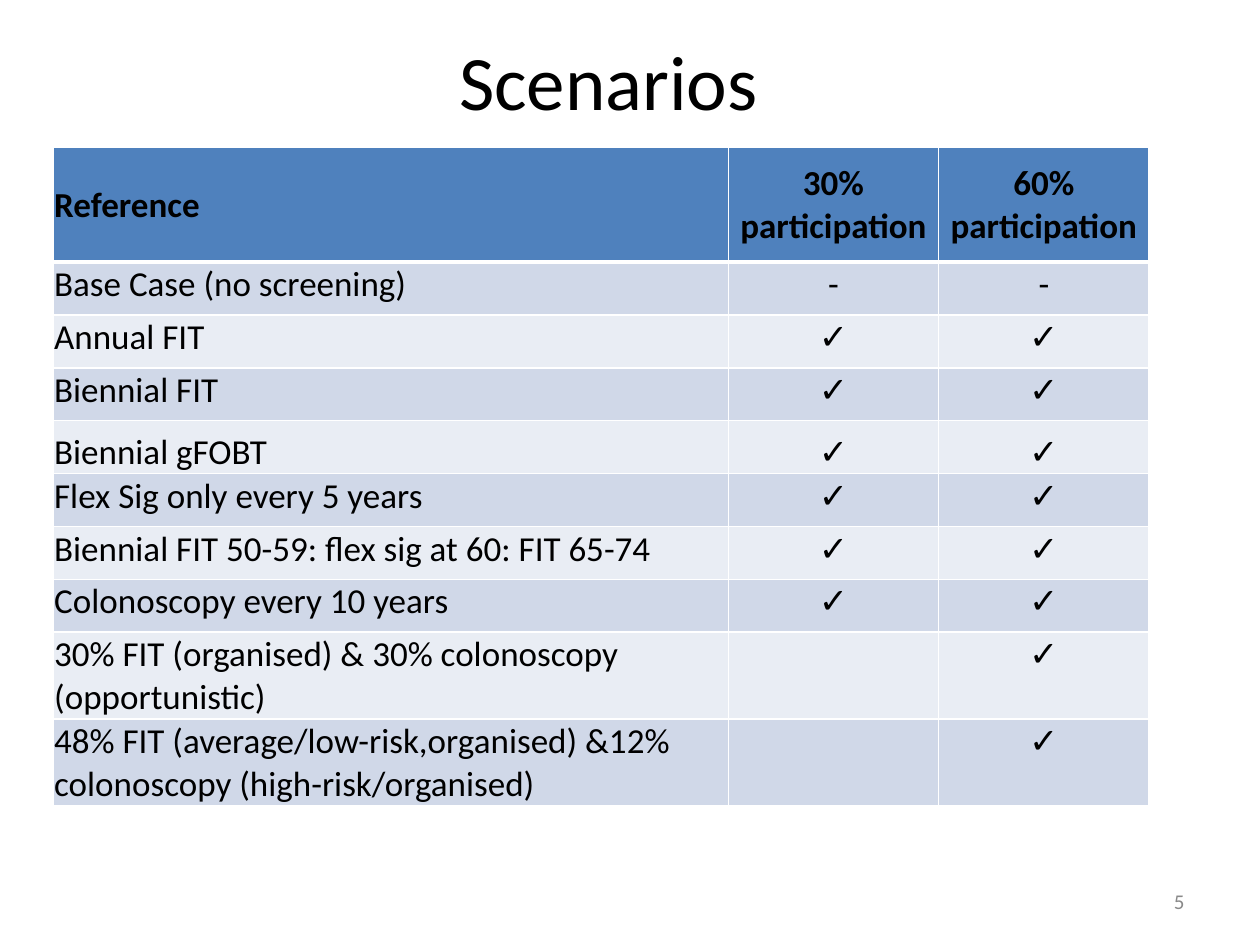
from lxml.etree import SubElement
from pptx import Presentation
from pptx.dml.color import RGBColor
from pptx.enum.text import MSO_ANCHOR, PP_ALIGN
from pptx.oxml.ns import qn
from pptx.util import Inches, Pt

COLORS = {"text": "000000", "header": "4F81BD", "odd": "D0D8E8",
          "even": "E9EDF4", "border": "FFFFFF", "number": "898989"}
TICK = "✓"

deck = Presentation()
deck.slide_width, deck.slide_height = Inches(10), Inches(7.5)
slide = deck.slides.add_slide(deck.slide_layouts[6])


def write(frame, text, align, color, **font_format):
    paragraph = frame.paragraphs[0]
    paragraph.alignment = align
    run = paragraph.add_run()
    run.text = text
    run.font.color.rgb = RGBColor.from_string(COLORS[color])
    for name, value in {"name": "Calibri", **font_format}.items():
        setattr(run.font, name, value)


def add_borders(cell, widths):
    properties = cell._tc.get_or_add_tcPr()
    for side, width in widths.items():
        line = SubElement(properties, qn(f"a:ln{side}"), w=str(Pt(width)))
        fill = SubElement(line, qn("a:solidFill"))
        SubElement(fill, qn("a:srgbClr"), val=COLORS["border"])


# Title and slide number
for text, box, align, color, size in [
    ("Scenarios", (0.33, 0.17, 9, 0.92), PP_ALIGN.CENTER, "text", 44),
    ("5", (7.17, 6.95, 2.33, 0.4), PP_ALIGN.RIGHT, "number", 12),
]:
    frame = slide.shapes.add_textbox(*map(Inches, box)).text_frame
    frame.word_wrap = True
    frame.vertical_anchor = MSO_ANCHOR.MIDDLE
    write(frame, text, align, color, size=Pt(size))

# Scenario table
scenarios = [
    ("Reference", "30% participation", "60% participation"),
    ("Base Case (no screening)", "-", "-"),
    ("Annual FIT", TICK, TICK),
    ("Biennial FIT", TICK, TICK),
    ("Biennial gFOBT", TICK, TICK),
    ("Flex Sig only every 5 years", TICK, TICK),
    ("Biennial FIT 50-59: flex sig at 60: FIT 65-74", TICK, TICK),
    ("Colonoscopy every 10 years", TICK, TICK),
    ("30% FIT (organised) & 30% colonoscopy (opportunistic)", "", TICK),
    ("48% FIT (average/low-risk,organised) &12% colonoscopy (high-risk/organised)", "", TICK),
]
column_widths = [5.36, 1.67, 1.67]
row_heights = [0.91] + [0.42] * 7 + [0.69] * 2
anchors = {0: MSO_ANCHOR.MIDDLE, 4: MSO_ANCHOR.BOTTOM}

table = slide.shapes.add_table(
    len(scenarios), len(column_widths), Inches(0.42), Inches(1.17),
    Inches(sum(column_widths)), Inches(sum(row_heights))).table
for column, width in zip(table.columns, column_widths):
    column.width = Inches(width)

for r, (scenario, height) in enumerate(zip(scenarios, row_heights)):
    table.rows[r].height = Inches(height)
    band = "header" if r == 0 else "odd" if r % 2 else "even"
    cell_format = {
        "margin_left": Inches(0.01), "margin_right": Inches(0.01),
        "margin_top": Inches(0.01), "margin_bottom": 0,
        "vertical_anchor": anchors.get(r, MSO_ANCHOR.TOP),
    }
    for c, text in enumerate(scenario):
        cell = table.cell(r, c)
        for name, value in cell_format.items():
            setattr(cell, name, value)
        # A heavier rule separates the header from the body
        add_borders(cell, {"L": 1, "R": 1, "T": 3 if r == 1 else 1,
                           "B": 3 if r == 0 else 1})
        cell.fill.solid()
        cell.fill.fore_color.rgb = RGBColor.from_string(COLORS[band])
        if text:
            write(cell.text_frame, text, PP_ALIGN.CENTER if c else PP_ALIGN.LEFT,
                  "text", size=Pt(20), bold=r == 0)

deck.save("out.pptx")
